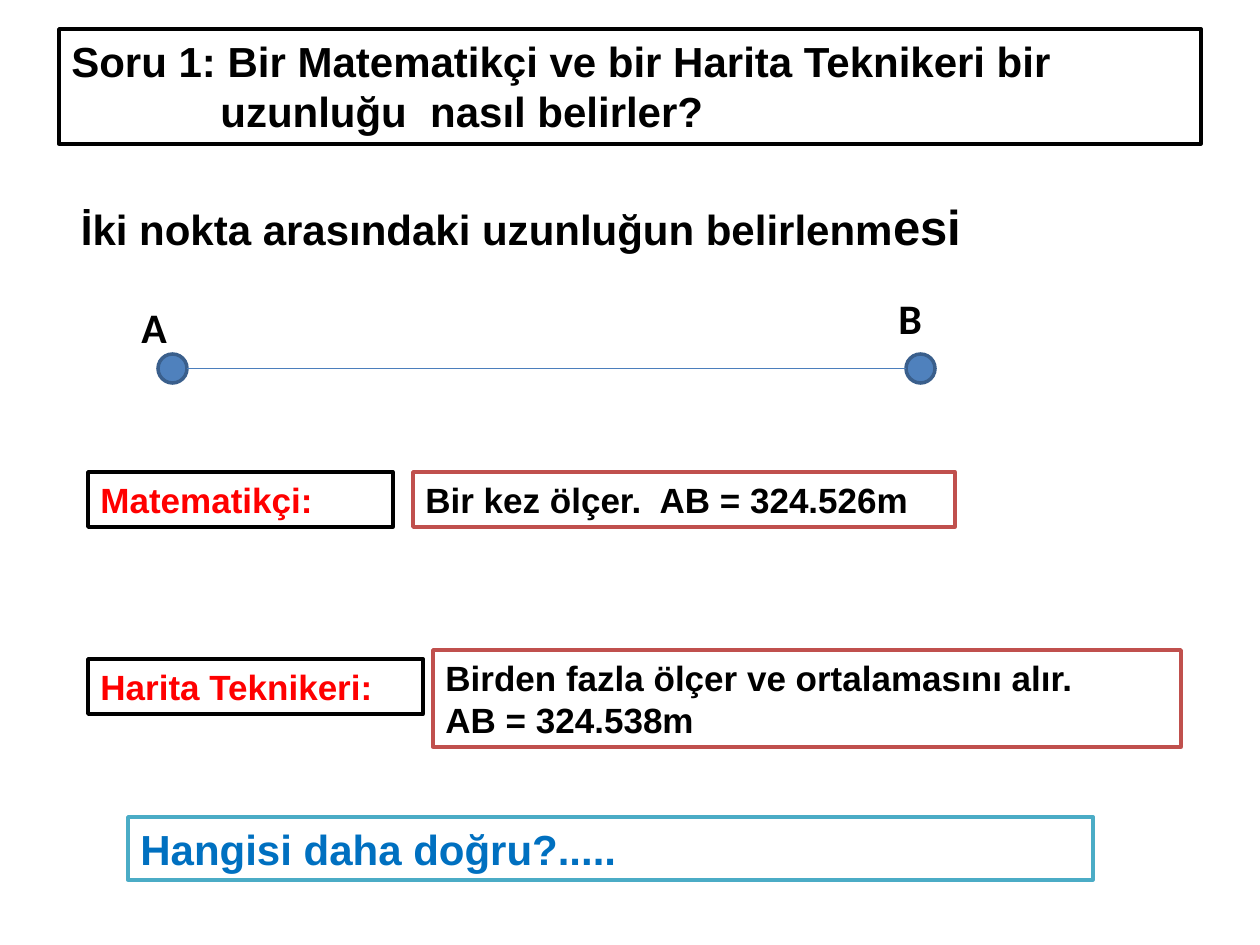
from lxml import etree
from pptx import Presentation
from pptx.dml.color import RGBColor
from pptx.enum.shapes import MSO_CONNECTOR, MSO_SHAPE
from pptx.enum.text import MSO_ANCHOR, PP_ALIGN
from pptx.oxml.ns import qn
from pptx.util import Pt

PX = 914400 / 126
STRAIGHT = MSO_CONNECTOR.STRAIGHT
RECTANGLE = MSO_SHAPE.RECTANGLE
DOT = MSO_SHAPE.FLOWCHART_CONNECTOR
TOP = MSO_ANCHOR.TOP
MIDDLE = MSO_ANCHOR.MIDDLE
LEFT = PP_ALIGN.LEFT
CENTER = PP_ALIGN.CENTER

COLORS = {
    "white": "FFFFFF",
    "black": "000000",
    "red": "FF0000",
    "blue": "0070C0",
    "brick": "C0504D",
    "teal": "4BACC6",
    "dot": "4F81BD",
    "dot_edge": "3A5F8C",
    "segment": "4B7EBC",
}


def px(*lengths):
    return [round(length * PX) for length in lengths]


def color(name):
    return RGBColor.from_string(COLORS[name])


def format_span(span, size, name="black", font="Arial"):
    span.font.name = font
    span.font.size = Pt(size)
    span.font.bold = True
    span.font.color.rgb = color(name)


def add_outlined(shapes, kind, box, fill, edge):
    shape = shapes.add_shape(kind, *px(*box))
    shape.shadow.inherit = False
    shape.fill.solid()
    shape.fill.fore_color.rgb = color(fill)
    shape.line.color.rgb = color(edge)
    shape.line.width = Pt(2)
    return shape


def add_framed_text(page, box, text, size, name, edge, hanging=0):
    shape = add_outlined(page.shapes, RECTANGLE, box, "white", edge)
    frame = shape.text_frame
    frame.word_wrap = True
    frame.vertical_anchor = TOP
    frame.text = text
    for para in frame.paragraphs:
        para.alignment = LEFT
        if hanging:
            indent = px(hanging)[0]
            properties = para._p.get_or_add_pPr()
            properties.set("marL", str(indent))
            properties.set("indent", str(-indent))
        for span in para.runs:
            format_span(span, size, name)


def fill_title(page, box):
    title = page.shapes.title
    title.left, title.top, title.width, title.height = px(*box)
    frame = title.text_frame
    frame.word_wrap = True
    frame.vertical_anchor = MIDDLE
    frame.text = "İki nokta arasındaki uzunluğun belirlenm"
    para = frame.paragraphs[0]
    para.alignment = CENTER
    ending = para.add_run()
    ending.text = "esi"
    for span, size in zip(para.runs, (24, 28)):
        format_span(span, size)


def draw_segment(page, box):
    left, top, width, height = box
    diameter = 29
    dot_top = top + height - diameter
    right_dot = left + width - diameter
    middle = dot_top + diameter / 2
    shapes = page.shapes.add_group_shape().shapes
    for dot_left in (left, right_dot):
        add_outlined(shapes, DOT, (dot_left, dot_top, diameter, diameter),
                     "dot", "dot_edge")
    line = shapes.add_connector(
        STRAIGHT, *px(left + diameter, middle, right_dot, middle))
    line.line.color.rgb = color("segment")
    line.line.width = Pt(0.75)
    etree.SubElement(line._element.spPr, qn("a:effectLst"))
    for letter, label_left, label_top in (
            ("A", left - 29, top + 9), ("B", right_dot - 20, top)):
        label = shapes.add_textbox(*px(label_left, label_top, 98, 63))
        frame = label.text_frame
        frame.word_wrap = True
        frame.text = letter
        format_span(frame.paragraphs[0].runs[0], 24, font="Calibri")


def add_answer(page, box, person, person_box, answer, answer_box):
    left, top = box
    for text, name, edge, (dx, dy, width, height) in (
            (person, "red", "black", person_box),
            (answer, "black", "brick", answer_box)):
        add_framed_text(page, (left + dx, top + dy, width, height),
                        text, 20, name, edge)


def main():
    deck = Presentation()
    deck.slide_width, deck.slide_height = px(1260, 945)
    page = deck.slides.add_slide(deck.slide_layouts[5])
    fill_title(page, (29, 147, 984, 158))
    draw_segment(page, (158, 286, 777, 97))
    add_answer(page, (88, 472),
               "Matematikçi:", (0, 0, 305, 55),
               "Bir kez ölçer.  AB = 324.526m", (325, 0, 542, 55))
    add_answer(page, (88, 650),
               "Harita Teknikeri:", (0, 9, 335, 55),
               "Birden fazla ölçer ve ortalamasını alır.\nAB = 324.538m",
               (345, 0, 748, 97))
    add_framed_text(
        page, (59, 29, 1142, 115),
        "Soru 1: Bir Matematikçi ve bir Harita Teknikeri bir "
        "uzunluğu  nasıl belirler?", 24, "black", "black", hanging=149)
    add_framed_text(page, (128, 817, 965, 63),
                    "Hangisi daha doğru?.....", 24, "blue", "teal")
    deck.save("out.pptx")


if __name__ == "__main__":
    main()
